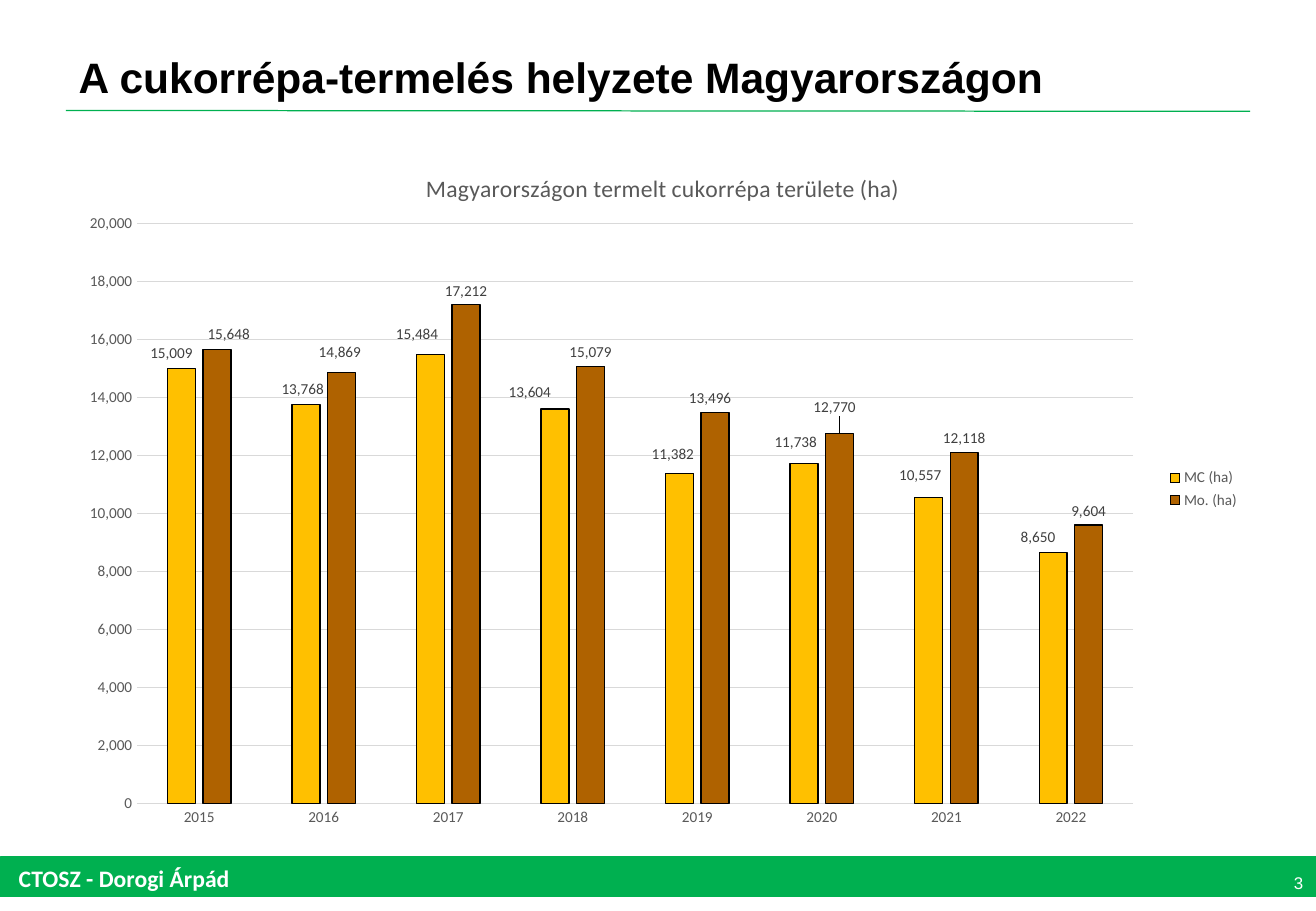
from lxml import etree
from pptx import Presentation
from pptx.chart.data import CategoryChartData
from pptx.dml.color import RGBColor
from pptx.enum.chart import XL_CHART_TYPE, XL_LABEL_POSITION, XL_LEGEND_POSITION, XL_TICK_MARK
from pptx.enum.shapes import MSO_CONNECTOR, MSO_SHAPE
from pptx.enum.text import MSO_ANCHOR, PP_ALIGN
from pptx.oxml.ns import qn
from pptx.util import Pt

GREEN = RGBColor(0x00, 0xB0, 0x50)
WHITE = RGBColor(0xFF, 0xFF, 0xFF)
BLACK = RGBColor(0x00, 0x00, 0x00)
GOLD = RGBColor(0xFF, 0xC0, 0x00)
BROWN = RGBColor(0xAF, 0x62, 0x00)
AXIS_GRAY = RGBColor(0x59, 0x59, 0x59)
LABEL_GRAY = RGBColor(0x40, 0x40, 0x40)
GRID_GRAY = RGBColor(0xD9, 0xD9, 0xD9)

COLUMNS = XL_CHART_TYPE.COLUMN_CLUSTERED
ABOVE_BAR = XL_LABEL_POSITION.OUTSIDE_END
LEGEND_RIGHT = XL_LEGEND_POSITION.RIGHT
NO_TICKS = XL_TICK_MARK.NONE
STRAIGHT = MSO_CONNECTOR.STRAIGHT
RECTANGLE = MSO_SHAPE.RECTANGLE
TOP, MIDDLE = MSO_ANCHOR.TOP, MSO_ANCHOR.MIDDLE
LEFT, RIGHT = PP_ALIGN.LEFT, PP_ALIGN.RIGHT

THOUSANDS = "#,##0"
YEARS = [str(year) for year in range(2015, 2023)]
# name, colour, hectares per year, label shifts in points by year index
AREAS = [
    ("MC (ha)", GOLD,
     [15009, 13768, 15484, 13604, 11382, 11738, 10557, 8650],
     {0: (-6, -1), 1: (-2, -1), 2: (-8, -4), 3: (-15, -2),
      4: (-4, -3), 5: (-5, -4), 6: (-5, -5), 7: (-9, -1)}),
    ("Mo. (ha)", BROWN,
     [15648, 14869, 17212, 15079, 13496, 12770, 12118, 9604],
     {0: (7, -1), 1: (-1, -4), 4: (-3, 0), 5: (-3, -7)}),
]


def set_font(font, size, color, name="Calibri", bold=False):
    font.size, font.name, font.bold = Pt(size), name, bold
    font.color.rgb = color


def manual_layout(**settings):
    """Return a c:layout element; settings are its children in schema order."""
    layout = etree.Element(qn("c:layout"))
    manual = etree.SubElement(layout, qn("c:manualLayout"))
    for tag, value in settings.items():
        etree.SubElement(manual, qn(f"c:{tag}")).set("val", str(value))
    return layout


def place(parent, layout, after=None):
    """Put the layout in place of any present one, after the given child."""
    for present in parent.findall(qn("c:layout")):
        parent.remove(present)
    if after is None:
        parent.insert(0, layout)
    else:
        parent.find(qn(after)).addnext(layout)


class SlideBuilder:
    def __init__(self, slide):
        self.shapes = slide.shapes

    def rule(self, x1, y1, x2, y2, color, width):
        line = self.shapes.add_connector(STRAIGHT, Pt(x1), Pt(y1), Pt(x2), Pt(y2))
        line.line.color.rgb = color
        line.line.width = Pt(width)
        etree.SubElement(line._element.spPr, qn("a:effectLst"))

    def band(self, x, y, width, height, color):
        band = self.shapes.add_shape(RECTANGLE, Pt(x), Pt(y), Pt(width), Pt(height))
        band.shadow.inherit = False
        band.fill.solid()
        band.fill.fore_color.rgb = color
        band.line.color.rgb = color
        band.line.width = Pt(2)

    def text(self, content, x, y, width, height, *, size, color, font="Arial",
             bold=False, align=LEFT, anchor=TOP, insets=(8.64, 4.32)):
        frame = self.shapes.add_textbox(Pt(x), Pt(y), Pt(width), Pt(height)).text_frame
        frame.word_wrap = True
        frame.vertical_anchor = anchor
        frame.margin_left = frame.margin_right = Pt(insets[0])
        frame.margin_top = frame.margin_bottom = Pt(insets[1])
        paragraph = frame.paragraphs[0]
        paragraph.alignment = align
        run = paragraph.add_run()
        run.text = content
        set_font(run.font, size, color, font, bold)

    def column_chart(self, title, x, y, width, height):
        data = CategoryChartData(number_format=THOUSANDS)
        data.categories = YEARS
        for name, _, hectares, _ in AREAS:
            data.add_series(name, hectares)
        chart = self.shapes.add_chart(
            COLUMNS, Pt(x), Pt(y), Pt(width), Pt(height), data).chart
        set_font(chart.font, 10, BLACK)
        self.chart_frame(chart, title)
        self.axes(chart)
        plot = chart.plots[0]
        plot.gap_width, plot.overlap = 219, -27
        plot.vary_by_categories = False
        for series, (_, color, _, shifts) in zip(plot.series, AREAS):
            self.columns(series, color)
            self.value_labels(series, shifts, width, height)

    def chart_frame(self, chart, title):
        """Set the title, the legend and the plot area."""
        chart.has_title = True
        frame = chart.chart_title.text_frame
        frame.text = title
        set_font(frame.paragraphs[0].runs[0].font, 14, AXIS_GRAY)
        chart.chart_title.include_in_layout = False
        place(chart.chart_title._element,
              manual_layout(xMode="edge", yMode="edge", x=0.3, y=0.04), "c:tx")
        place(chart._chartSpace.chart.plotArea, manual_layout(
            layoutTarget="inner", xMode="edge", yMode="edge",
            x=0.06, y=0.12, w=0.84, h=0.83))
        chart.has_legend = True
        chart.legend.position = LEGEND_RIGHT
        chart.legend.include_in_layout = False
        set_font(chart.legend.font, 9, AXIS_GRAY)

    def axes(self, chart):
        years, hectares = chart.category_axis, chart.value_axis
        for axis in (years, hectares):
            axis.major_tick_mark = axis.minor_tick_mark = NO_TICKS
            set_font(axis.tick_labels.font, 9, AXIS_GRAY)
        hectares.minimum_scale, hectares.maximum_scale = 0, 20000
        hectares.major_unit = 2000
        hectares.tick_labels.number_format = THOUSANDS
        hectares.tick_labels.number_format_is_linked = False
        hectares.format.line.fill.background()
        for line in (years.format.line, hectares.major_gridlines.format.line):
            line.color.rgb = GRID_GRAY
            line.width = Pt(0.75)

    def columns(self, series, color):
        series.invert_if_negative = False
        series.format.fill.solid()
        series.format.fill.fore_color.rgb = color
        series.format.line.color.rgb = BLACK
        series.format.line.width = Pt(0.75)

    def value_labels(self, series, shifts, width, height):
        labels = series.data_labels
        labels.show_value = True
        labels.position = ABOVE_BAR
        labels.number_format = THOUSANDS
        labels.number_format_is_linked = False
        set_font(labels.font, 9, LABEL_GRAY)
        for index in shifts:
            label = series.points[index].data_label
            label.position = ABOVE_BAR
            set_font(label.font, 9, LABEL_GRAY)
        for label, (dx, dy) in zip(series._element.xpath("c:dLbls/c:dLbl"),
                                   shifts.values()):
            place(label, manual_layout(x=dx / width, y=dy / height), "c:idx")


def main():
    deck = Presentation()
    deck.slide_width, deck.slide_height = Pt(780), Pt(540)
    builder = SlideBuilder(deck.slides.add_slide(deck.slide_layouts[6]))
    builder.rule(39, 65.5, 741, 66, GREEN, 0.75)
    builder.band(0.5, 508.5, 780, 22.5, GREEN)
    builder.text("CTOSZ - Dorogi Árpád", 4, 508.5, 158.5, 24.5, size=14,
                 color=WHITE, font="Calibri", bold=True, insets=(7.2, 3.6))
    builder.text("A cukorrépa-termelés helyzete Magyarországon", 38, 26, 601, 39,
                 size=25.2, color=BLACK, bold=True)
    builder.text("3", 749.5, 508.5, 31.5, 29, size=10, color=WHITE,
                 align=RIGHT, anchor=MIDDLE)
    builder.column_chart("Magyarországon termelt cukorrépa területe (ha)",
                         39, 83, 703, 414)
    deck.save("out.pptx")


if __name__ == "__main__":
    main()
